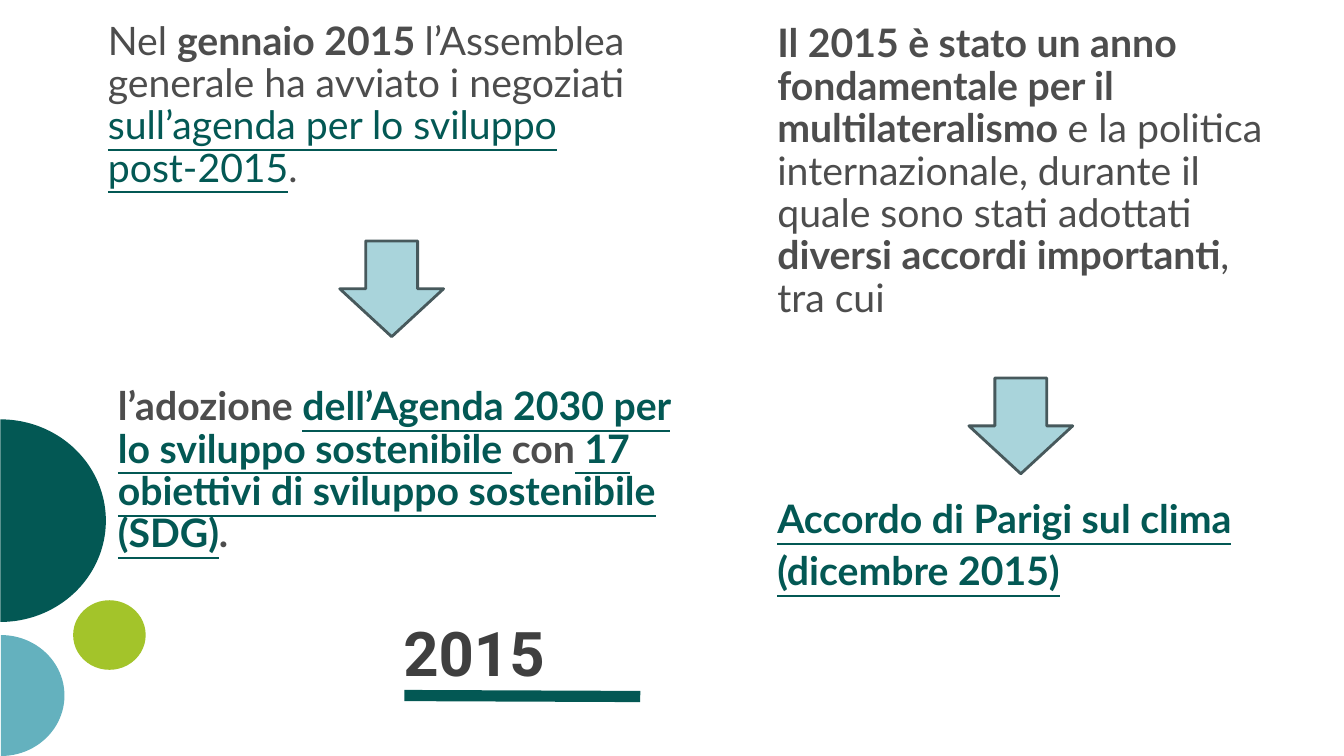
from lxml import etree
from pptx import Presentation
from pptx.dml.color import RGBColor
from pptx.enum import shapes, text
from pptx.oxml.ns import qn
from pptx.util import Inches, Pt

TEAL = RGBColor(0x03, 0x58, 0x54)
AQUA = RGBColor(0x64, 0xB1, 0xBE)
LIME = RGBColor(0xA3, 0xC4, 0x2A)
PALE_BLUE = RGBColor(0xA9, 0xD4, 0xDB)
SLATE = RGBColor(0x47, 0x59, 0x5C)
GREY = RGBColor(0x4D, 0x4D, 0x4D)
TITLE_GREY = RGBColor(0x3F, 0x3F, 0x3F)

HALF_TURN = 108  # end angle of a half-circle pie, in adjustment units

# Run styles: (bold, linked)
PLAIN, BOLD = (False, False), (True, False)
LINK, BOLD_LINK = (False, True), (True, True)

NEGOTIATIONS = [
    ("Nel ", PLAIN),
    ("gennaio 2015 ", BOLD),
    ("l’Assemblea generale ha avviato i negoziati ", PLAIN),
    ("sull’agenda per lo sviluppo post-2015", LINK),
    (".", PLAIN),
]
AGENDA = [
    ("l’adozione ", BOLD),
    ("dell’Agenda 2030 per lo sviluppo sostenibile ", BOLD_LINK),
    ("con", BOLD),
    (" 17 obiettivi di sviluppo sostenibile (SDG)", BOLD_LINK),
    (".", BOLD),
]
MULTILATERALISM = [
    ("Il 2015 è stato un anno fondamentale per il multilateralismo ", BOLD),
    ("e la politica internazionale, durante il quale sono stati adottati ", PLAIN),
    ("diversi accordi importanti", BOLD),
    (", tra cui", PLAIN),
]
PARIS = [("Accordo di Parigi sul clima (dicembre 2015)", BOLD_LINK)]


def set_margins(tf, left, top, right, bottom):
    tf.margin_left, tf.margin_top = Inches(left), Inches(top)
    tf.margin_right, tf.margin_bottom = Inches(right), Inches(bottom)


def place(sp, left, top, width, height):
    sp.left, sp.top = Inches(left), Inches(top)
    sp.width, sp.height = Inches(width), Inches(height)


def add_title(slide, title):
    sp = slide.shapes.title
    place(sp, 4, 5.78, 2.4, 1.51)
    tf = sp.text_frame
    tf.text = title
    tf.auto_size = text.MSO_AUTO_SIZE.NONE
    tf.vertical_anchor = text.MSO_ANCHOR.MIDDLE
    set_margins(tf, 0, 0, 0, 0)
    p = tf.paragraphs[0]
    p.alignment = text.PP_ALIGN.LEFT
    p.line_spacing = 0.8
    font = p.runs[0].font
    font.name, font.size, font.bold = "Roboto", Pt(44), True
    font.color.rgb = TITLE_GREY


def fill_paragraph(p, runs, line_spacing=0.9, space_before=0):
    p.line_spacing = line_spacing
    p.space_before = Pt(space_before)
    p._p.get_or_add_pPr().set("marL", str(Inches(0.25)))
    for words, (bold, linked) in runs:
        r = p.add_run()
        r.text = words
        r.font.name, r.font.size = "Lato", Pt(28)
        r.font.bold, r.font.underline = bold, linked
        r.font.color.rgb = TEAL if linked else GREY


def add_text(slide, box, margins, runs):
    tf = slide.shapes.add_textbox(*map(Inches, box)).text_frame
    tf.word_wrap = True
    set_margins(tf, *margins)
    fill_paragraph(tf.paragraphs[0], runs)
    return tf


def add_shape(slide, kind, box, fill, rotation=0):
    sp = slide.shapes.add_shape(kind, *map(Inches, box))
    sp.shadow.inherit = False
    sp.rotation = rotation
    sp.fill.solid()
    sp.fill.fore_color.rgb = fill
    sp.line.fill.background()
    return sp


def add_half_circle(slide, box, fill):
    sp = add_shape(slide, shapes.MSO_SHAPE.PIE, box, fill, 270)
    sp.adjustments[0] = 0
    sp.adjustments[1] = HALF_TURN


def add_down_arrow(slide, left, top):
    sp = add_shape(slide, shapes.MSO_SHAPE.DOWN_ARROW, (left, top, 1.03, 0.95), PALE_BLUE)
    sp.line.color.rgb = SLATE
    sp.line.width = Pt(2)


def add_title_rule(slide):
    ends = map(Inches, (4.01, 6.9, 6.35, 6.91))
    rule = slide.shapes.add_connector(shapes.MSO_CONNECTOR.STRAIGHT, *ends)
    rule.line.color.rgb = TEAL
    rule.line.width = Pt(8)
    etree.SubElement(rule._element.spPr, qn("a:effectLst"))


def main():
    prs = Presentation()
    prs.slide_width, prs.slide_height = Inches(13.33), Inches(7.5)
    slide = prs.slides.add_slide(prs.slide_layouts[5])

    add_title_rule(slide)
    add_half_circle(slide, (-1, 4.12, 2.01, 2.09), TEAL)
    add_half_circle(slide, (-0.59, 6.27, 1.2, 1.26), AQUA)
    add_shape(slide, shapes.MSO_SHAPE.OVAL, (0.74, 5.94, 0.69, 0.72), LIME, 270)
    add_title(slide, "2015")

    add_text(slide, (0.82, -0.09, 6.55, 2.41), (0, 0.3, 0.1, 0.05), NEGOTIATIONS)
    add_down_arrow(slide, 3.37, 2.39)
    add_text(slide, (0.82, 3.79, 6.12, 1.8), (0.1, 0.05, 0.1, 0.05), AGENDA)

    tf = add_text(slide, (7.46, 0.19, 5.32, 6.07), (0, 0.05, 0.1, 0.05), MULTILATERALISM)
    fill_paragraph(tf.add_paragraph(), PARIS, line_spacing=1.1, space_before=121)
    add_down_arrow(slide, 9.61, 3.75)

    prs.save("out.pptx")


if __name__ == "__main__":
    main()
